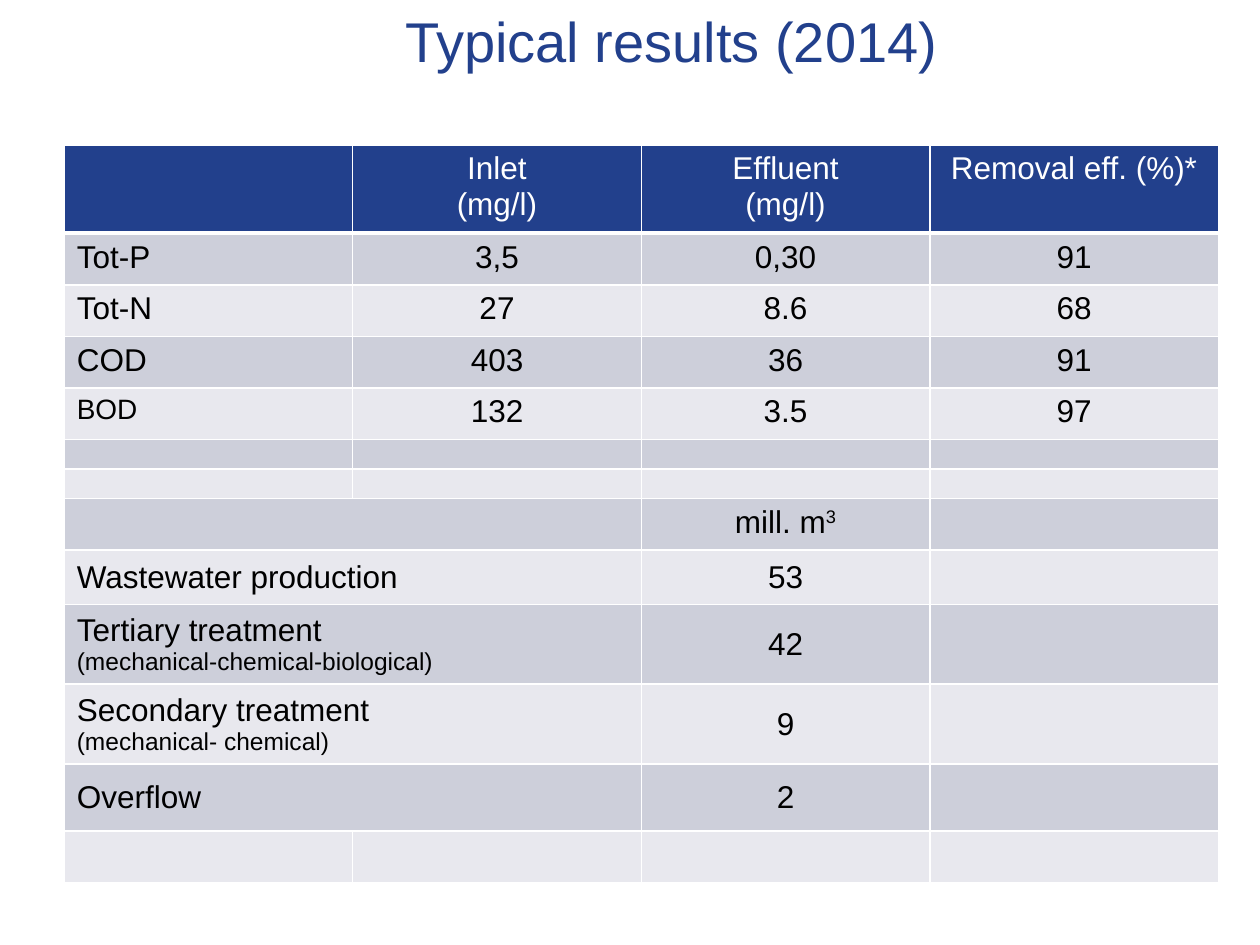
"""Build a slide with a table of typical wastewater treatment results."""
import pptx
import pptx.dml.color
import pptx.enum.text
import pptx.oxml
import pptx.oxml.ns
import pptx.util

Inches = pptx.util.Inches
Pt = pptx.util.Pt
RGBColor = pptx.dml.color.RGBColor
ALIGN = pptx.enum.text.PP_ALIGN
ANCHOR = pptx.enum.text.MSO_ANCHOR

BLUE = RGBColor(0x22, 0x40, 0x8C)
WHITE = RGBColor(0xFF, 0xFF, 0xFF)
BLACK = RGBColor(0, 0, 0)
BANDS = [RGBColor(0xE8, 0xE8, 0xEE), RGBColor(0xCD, 0xCF, 0xDA)]

ROWS = [
    (0.7, ["", "Inlet\n(mg/l)", "Effluent\n(mg/l)", "Removal eff. (%)*"]),
    (0.41, ["Tot-P", "3,5", "0,30", "91"]),
    (0.41, ["Tot-N", "27", "8.6", "68"]),
    (0.41, ["COD", "403", "36", "91"]),
    (0.41, ["BOD", "132", "3.5", "97"]),
    (0.23, [""] * 4),
    (0.23, [""] * 4),
    (0.41, ["", "", "mill. m^3", ""]),
    (0.43, ["Wastewater production", "", "53", ""]),
    (0.63, ["Tertiary treatment\n(mechanical-chemical-biological)", "", "42", ""]),
    (0.63, ["Secondary treatment\n(mechanical- chemical)", "", "9", ""]),
    (0.53, ["Overflow", "", "2", ""]),
    (0.41, [""] * 4),
]
MERGED = range(7, 12)
MIDDLE = range(8, 12)


def add_run(p, text, size, color):
    r = p.add_run()
    r.text = text
    for name, value in {"name": "Arial", "size": Pt(size)}.items():
        setattr(r.font, name, value)
    r.font.color.rgb = color
    return r


def add_border(cell, side, width):
    tcPr = cell._tc.get_or_add_tcPr()
    tcPr.append(pptx.oxml.parse_xml(
        f'<a:{side} {pptx.oxml.ns.nsdecls("a")} w="{Pt(width)}"><a:solidFill>'
        f'<a:srgbClr val="{WHITE}"/></a:solidFill></a:{side}>'))


prs = pptx.Presentation()
prs.slide_width, prs.slide_height = Inches(10), Inches(7.5)
s = prs.slides.add_slide(prs.slide_layouts[6])

sp = s.shapes.add_textbox(Inches(0.83), Inches(0), Inches(9), Inches(1.25))
tf = sp.text_frame
for name, value in {"word_wrap": True, "vertical_anchor": ANCHOR.TOP}.items():
    setattr(tf, name, value)
p = tf.paragraphs[0]
p.alignment = ALIGN.CENTER
add_run(p, "Typical results (2014)", 32, BLUE)

table = s.shapes.add_table(len(ROWS), 4, Inches(0.51), Inches(1.15),
                           Inches(9.15), Inches(5.82)).table
for column in table.columns:
    column.width = Inches(2.29)

for i, (height, texts) in enumerate(ROWS):
    table.rows[i].height = Inches(height)
    for j, text in enumerate(texts):
        cell = table.cell(i, j)
        for side in ("lnL", "lnR", "lnT", "lnB"):
            add_border(cell, side, 3 if i == 0 and side == "lnB" else 1)
        cell.fill.solid()
        cell.fill.fore_color.rgb = BANDS[i % 2] if i else BLUE
        cell.vertical_anchor = ANCHOR.MIDDLE if i in MIDDLE else ANCHOR.TOP
        tf = cell.text_frame
        if not text:
            tf.paragraphs[0]._p.append(pptx.oxml.parse_xml(
                f'<a:endParaRPr {pptx.oxml.ns.nsdecls("a")} sz="800"/>'))
            continue
        for k, line in enumerate(text.split("\n")):
            p = tf.add_paragraph() if k else tf.paragraphs[0]
            p.alignment = ALIGN.CENTER if j else ALIGN.LEFT
            size = 14 if k and j == 0 else 16 if line == "BOD" else 18
            color = BLACK if i else WHITE
            base, _, power = line.partition("^")
            add_run(p, base, size, color)
            if power:
                r = add_run(p, power, size, color)
                r._r.get_or_add_rPr().set("baseline", "30000")
    if i in MERGED:
        table.cell(i, 0).merge(table.cell(i, 1))

prs.save("out.pptx")
